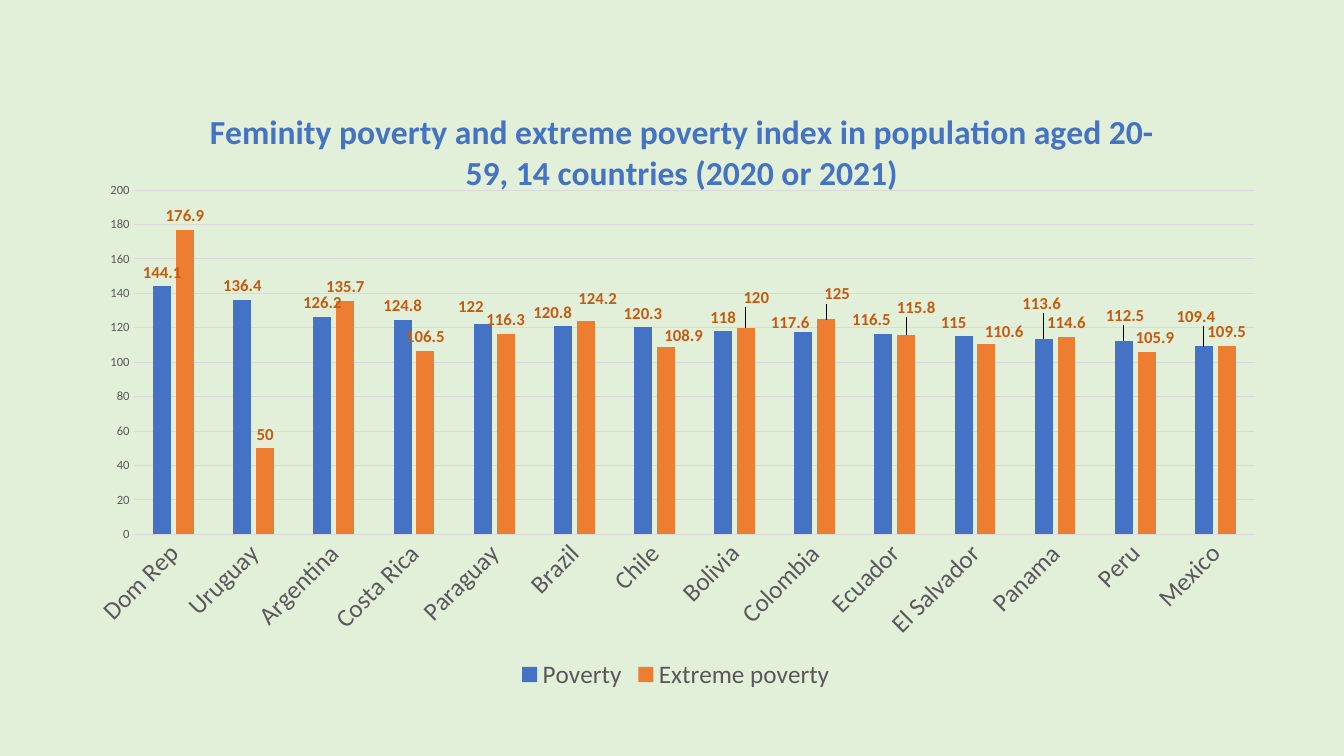
from typing import NamedTuple

from lxml import etree
from pptx import Presentation
from pptx.chart.data import CategoryChartData
from pptx.dml.color import RGBColor
from pptx.enum import chart as ch
from pptx.oxml import ns
from pptx.util import Cm, Pt

PALE_GREEN = RGBColor(0xE2, 0xF0, 0xD9)
BLUE = RGBColor(0x44, 0x72, 0xC4)
ORANGE = RGBColor(0xED, 0x7D, 0x31)
RUST = RGBColor(0xC5, 0x5A, 0x11)
GREY = RGBColor(0x59, 0x59, 0x59)
LIGHT_GREY = RGBColor(0xD9, 0xD9, 0xD9)

CHART_WIDTH, CHART_HEIGHT = Cm(30.5), Cm(15.55)
HEADING = ("Feminity poverty and extreme poverty index in population aged 20-59, "
           "14 countries (2020 or 2021)")
COUNTRIES = ("Dom Rep", "Uruguay", "Argentina", "Costa Rica", "Paraguay", "Brazil", "Chile",
             "Bolivia", "Colombia", "Ecuador", "El Salvador", "Panama", "Peru", "Mexico")


class Index(NamedTuple):
    """One series; label_shifts moves labels by (right, down) in cm, by country."""
    name: str
    color: RGBColor
    values: tuple[float, ...]
    label_shifts: dict[str, tuple[float, float]]


INDICES = (
    Index("Poverty", BLUE,
          (144.1, 136.4, 126.2, 124.8, 122, 120.8, 120.3,
           118, 117.6, 116.5, 115, 113.6, 112.5, 109.4),
          {"Paraguay": (-0.3, -0.1), "Brazil": (-0.26, 0), "Colombia": (-0.33, 0.11),
           "Ecuador": (-0.3, 0), "El Salvador": (-0.25, 0), "Panama": (-0.05, -0.53),
           "Peru": (0.03, -0.28), "Mexico": (-0.2, -0.4)}),
    Index("Extreme poverty", ORANGE,
          (176.9, 50, 135.7, 106.5, 116.3, 124.2, 108.9,
           120, 125, 115.8, 110.6, 114.6, 105.9, 109.5),
          {"Brazil": (0.3, -0.2), "Chile": (0.45, 0.06), "Bolivia": (0.26, -0.4),
           "Colombia": (0.28, -0.28), "Ecuador": (0.25, -0.34), "El Salvador": (0.45, 0.03),
           "Peru": (0.21, 0)}),
)


def format_font(font, size: float, color: RGBColor, bold: bool = False) -> None:
    for attribute, value in {"name": "Calibri", "size": Pt(size), "bold": bold}.items():
        setattr(font, attribute, value)
    font.color.rgb = color


def format_line(line) -> None:
    line.color.rgb = LIGHT_GREY
    line.width = Pt(0.75)


def manual_layout(**settings: float | str):
    """Return a c:layout element holding the given manual settings in order."""
    layout = etree.Element(ns.qn("c:layout"))
    manual = etree.SubElement(layout, ns.qn("c:manualLayout"))
    for tag, value in settings.items():
        etree.SubElement(manual, ns.qn(f"c:{tag}")).set("val", str(value))
    return layout


def format_series(series, index: Index) -> None:
    series.format.fill.solid()
    series.format.fill.fore_color.rgb = index.color
    labels = series.data_labels
    labels.show_value = True
    labels.position = ch.XL_LABEL_POSITION.OUTSIDE_END
    format_font(labels.font, 12, RUST, bold=True)
    for country, (right, down) in index.label_shifts.items():
        point = COUNTRIES.index(country)
        label = series.points[point].data_label
        format_font(label.font, 12, RUST, bold=True)
        label.position = ch.XL_LABEL_POSITION.OUTSIDE_END
        number = series._element.xpath(f"c:dLbls/c:dLbl/c:idx[@val='{point}']")[0]
        number.addnext(manual_layout(x=Cm(right) / CHART_WIDTH, y=Cm(down) / CHART_HEIGHT))


def format_heading(chart) -> None:
    frame = chart.chart_title.text_frame
    frame.text = HEADING
    format_font(frame.paragraphs[0].runs[0].font, 24, BLUE, bold=True)
    chart.chart_title.include_in_layout = False
    title = chart.chart_title._element
    for layout in title.findall(ns.qn("c:layout")):
        title.remove(layout)
    title.find(ns.qn("c:tx")).addnext(
        manual_layout(xMode="edge", yMode="edge", x=0.11, y=0.04))


def format_axes(chart) -> None:
    countries, values = chart.category_axis, chart.value_axis
    for axis, size in ((countries, 18), (values, 9)):
        axis.major_tick_mark = axis.minor_tick_mark = ch.XL_TICK_MARK.NONE
        format_font(axis.tick_labels.font, size, GREY)
    format_line(countries.format.line)
    values.format.line.fill.background()
    format_line(values.major_gridlines.format.line)
    for attribute, value in {"minimum_scale": 0, "maximum_scale": 200, "major_unit": 20}.items():
        setattr(values, attribute, value)
    countries._element.find(ns.qn("c:txPr")).find(ns.qn("a:bodyPr")).set("rot", "-2700000")


def format_plot(chart) -> None:
    plot = chart.plots[0]
    for attribute, value in {"gap_width": 219, "overlap": -27, "vary_by_categories": False}.items():
        setattr(plot, attribute, value)
    for series, index in zip(plot.series, INDICES):
        format_series(series, index)
    area = chart._chartSpace.chart.plotArea
    for layout in area.findall(ns.qn("c:layout")):
        area.remove(layout)
    area.insert(0, manual_layout(layoutTarget="inner", xMode="edge", yMode="edge",
                                 x=0.052, y=0.182, w=0.927, h=0.558))


def add_index_chart(slide) -> None:
    data = CategoryChartData()
    data.categories = COUNTRIES
    for index in INDICES:
        data.add_series(index.name, index.values)
    chart = slide.shapes.add_chart(ch.XL_CHART_TYPE.COLUMN_CLUSTERED, Cm(1.78), Cm(1.96),
                                   CHART_WIDTH, CHART_HEIGHT, data).chart
    format_font(chart.font, 10, GREY)
    format_heading(chart)
    format_axes(chart)
    format_plot(chart)
    chart.has_legend = True
    chart.legend.position = ch.XL_LEGEND_POSITION.BOTTOM
    chart.legend.include_in_layout = False
    format_font(chart.legend.font, 18, GREY)


def main() -> None:
    deck = Presentation()
    deck.slide_width, deck.slide_height = Cm(33.87), Cm(19.05)
    slide = deck.slides.add_slide(deck.slide_layouts[6])
    slide.background.fill.solid()
    slide.background.fill.fore_color.rgb = PALE_GREEN
    add_index_chart(slide)
    deck.save("out.pptx")


if __name__ == "__main__":
    main()
